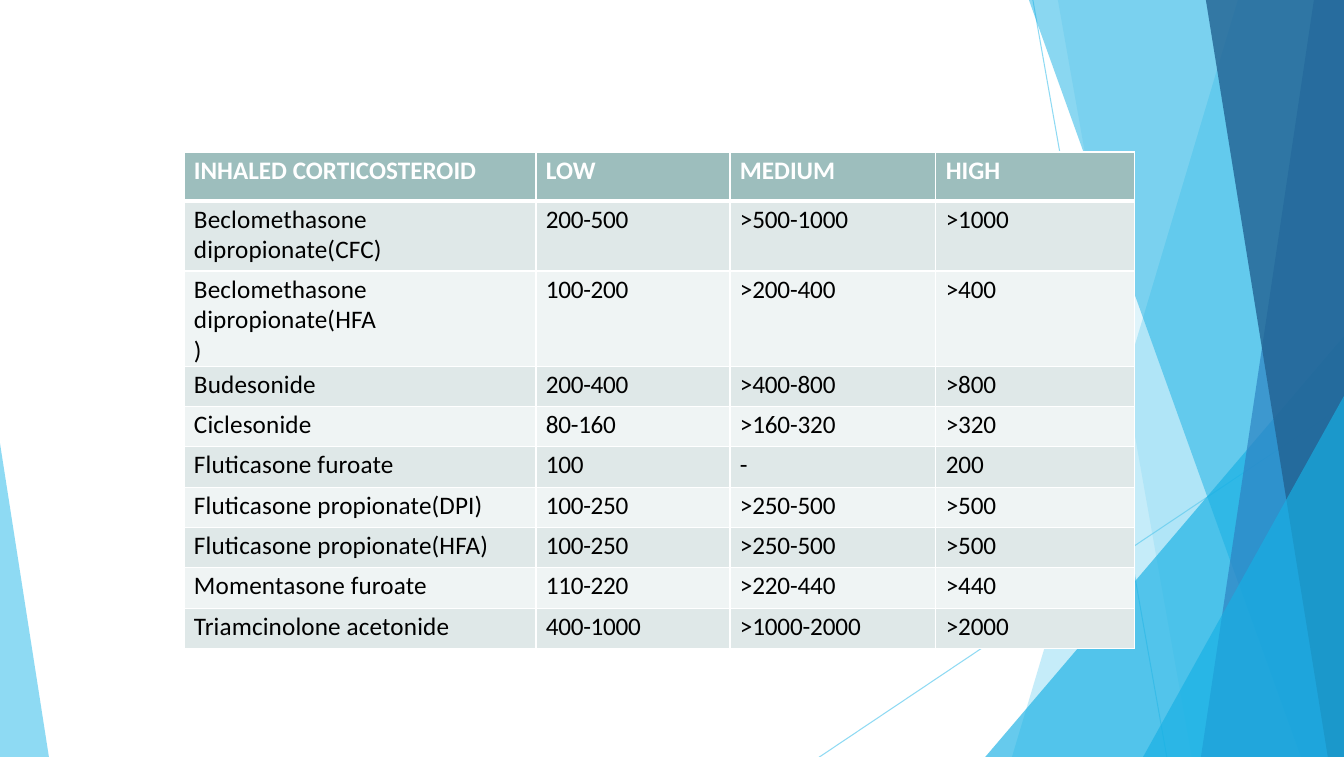
import lxml.etree
import pptx
import pptx.dml.color
import pptx.enum.shapes
import pptx.oxml.ns
import pptx.util

RGB = pptx.dml.color.RGBColor
qn = pptx.oxml.ns.qn
PX = 9080  # EMU per px
WIDTH, HEIGHT = 1344, 757

WHITE = RGB(0xFF, 0xFF, 0xFF)
BLACK = RGB(0x00, 0x00, 0x00)
SKY = RGB(0x5F, 0xCB, 0xEF)
CYAN = RGB(0x17, 0xB0, 0xE4)
BLUE = RGB(0x2E, 0x83, 0xC3)
NAVY = RGB(0x22, 0x62, 0x92)
HEADER = RGB(0x9D, 0xBE, 0xBD)
BAND_DARK = RGB(0xDF, 0xE8, 0xE8)
BAND_LIGHT = RGB(0xEF, 0xF4, 0xF4)

COLUMNS = [352, 194, 206, 199]
COLUMN_SPACING = [10, -20, -10, -10]  # hundredths of a point
ROW_HEIGHTS = [49, 70, 70] + [40, 40, 41] * 2 + [40]
# Right margins that break the two long drug names over several lines
NAME_MARGINS = {1: 152, 2: 156}
DOSES = [
    ("INHALED CORTICOSTEROID", "LOW", "MEDIUM", "HIGH"),
    ("Beclomethasone dipropionate(CFC)", "200-500", ">500-1000", ">1000"),
    ("Beclomethasone dipropionate(HFA)", "100-200", ">200-400", ">400"),
    ("Budesonide", "200-400", ">400-800", ">800"),
    ("Ciclesonide", "80-160", ">160-320", ">320"),
    ("Fluticasone furoate", "100", "-", "200"),
    ("Fluticasone propionate(DPI)", "100-250", ">250-500", ">500"),
    ("Fluticasone propionate(HFA)", "100-250", ">250-500", ">500"),
    ("Momentasone furoate", "110-220", ">220-440", ">440"),
    ("Triamcinolone acetonide", "400-1000", ">1000-2000", ">2000"),
]


def px(*lengths):
    return [pptx.util.Emu(n * PX) for n in lengths]


def set_alpha(fill_parent, percent):
    """Make the solid colour below an element partly transparent."""
    color = fill_parent.find(qn("a:solidFill")).find(qn("a:srgbClr"))
    lxml.etree.SubElement(color, qn("a:alpha"), val=str(percent * 1000))


def paint(shape, color, alpha):
    shape.shadow.inherit = False
    shape.fill.solid()
    shape.fill.fore_color.rgb = color
    set_alpha(shape._element.spPr, alpha)
    shape.line.fill.background()


def add_thin_line(s, x1, y1, x2, y2):
    line = s.shapes.add_connector(
        pptx.enum.shapes.MSO_CONNECTOR.STRAIGHT, *px(x1, y1, x2, y2))
    line.line.color.rgb = SKY
    line.line.width = pptx.util.Pt(0.75)
    spPr = line._element.spPr
    set_alpha(spPr.find(qn("a:ln")), 70)
    lxml.etree.SubElement(spPr, qn("a:effectLst"))


def add_band(s, top_x, bottom_x, color, alpha):
    """Fill from a slanted left edge to the right side of the slide."""
    builder = s.shapes.build_freeform(top_x, 0, scale=PX)
    builder.add_line_segments(
        [(WIDTH, 0), (WIDTH, HEIGHT), (bottom_x, HEIGHT)], close=True)
    paint(builder.convert_to_shape(), color, alpha)


def add_corner(s, x, y, w, apex, color, alpha):
    """Triangle standing on the bottom edge; apex 0 is left, 1 is right."""
    sp = s.shapes.add_shape(
        pptx.enum.shapes.MSO_SHAPE.ISOSCELES_TRIANGLE, *px(x, y, w, HEIGHT - y))
    sp.adjustments[0] = apex
    paint(sp, color, alpha)


def write_text(tf, text, size=18, font="Calibri", color=BLACK, bold=False,
               spacing=0):
    p = tf.paragraphs[0]
    p.space_before = pptx.util.Pt(2)
    r = p.add_run()
    r.text = text
    r.font.size = pptx.util.Pt(size)
    r.font.name = font
    r.font.bold = bold
    r.font.color.rgb = color
    r._r.get_or_add_rPr().set("spc", str(spacing))


def add_border(cell, side, points):
    tcPr = cell._tc.get_or_add_tcPr()
    ln = lxml.etree.SubElement(
        tcPr, qn("a:ln" + side), w=str(pptx.util.Pt(points)))
    fill = lxml.etree.SubElement(ln, qn("a:solidFill"))
    lxml.etree.SubElement(fill, qn("a:srgbClr"), val=str(WHITE))


def fill_cell(cell, text, row, col):
    right = NAME_MARGINS.get(row, 0) if col == 0 else 0
    cell.margin_left, cell.margin_top = px(10, 3)
    cell.margin_right, cell.margin_bottom = px(right, 0)
    for side in "LRTB":
        under_header = (row, side) in [(0, "B"), (1, "T")]
        add_border(cell, side, 3 if under_header else 1)
    cell.fill.solid()
    if row == 0:
        cell.fill.fore_color.rgb = HEADER
        write_text(cell.text_frame, text, color=WHITE, bold=True)
    else:
        cell.fill.fore_color.rgb = BAND_DARK if row % 2 else BAND_LIGHT
        write_text(cell.text_frame, text, spacing=COLUMN_SPACING[col])


def add_dose_table(s, x, y):
    table = s.shapes.add_table(
        len(DOSES), len(COLUMNS),
        *px(x, y, sum(COLUMNS), sum(ROW_HEIGHTS))).table
    for column, width in zip(table.columns, px(*COLUMNS)):
        column.width = width
    for row, height in zip(table.rows, px(*ROW_HEIGHTS)):
        row.height = height
    for i, values in enumerate(DOSES):
        for j, text in enumerate(values):
            fill_cell(table.cell(i, j), text, i, j)


def main():
    prs = pptx.Presentation()
    prs.slide_width = pptx.util.Pt(961)
    prs.slide_height = pptx.util.Pt(541)
    s = prs.slides.add_slide(prs.slide_layouts[6])

    add_thin_line(s, 1033, 0, 1167, HEIGHT)
    add_thin_line(s, 1343, 406, 819, HEIGHT)
    add_band(s, 1238, 1012, SKY, 36)
    add_band(s, 1058, 1192, SKY, 20)
    add_corner(s, 985, 336, 359, 1, CYAN, 66)
    add_band(s, 1029, 1301, CYAN, 50)
    add_band(s, 1314, 1201, BLUE, 70)
    add_band(s, 1206, 1328, NAVY, 80)
    add_corner(s, 1143, 396, 201, 1, CYAN, 66)
    add_corner(s, 0, 443, 49, 0, SKY, 70)

    add_dose_table(s, 184, 152)
    prs.save("out.pptx")


if __name__ == "__main__":
    main()
